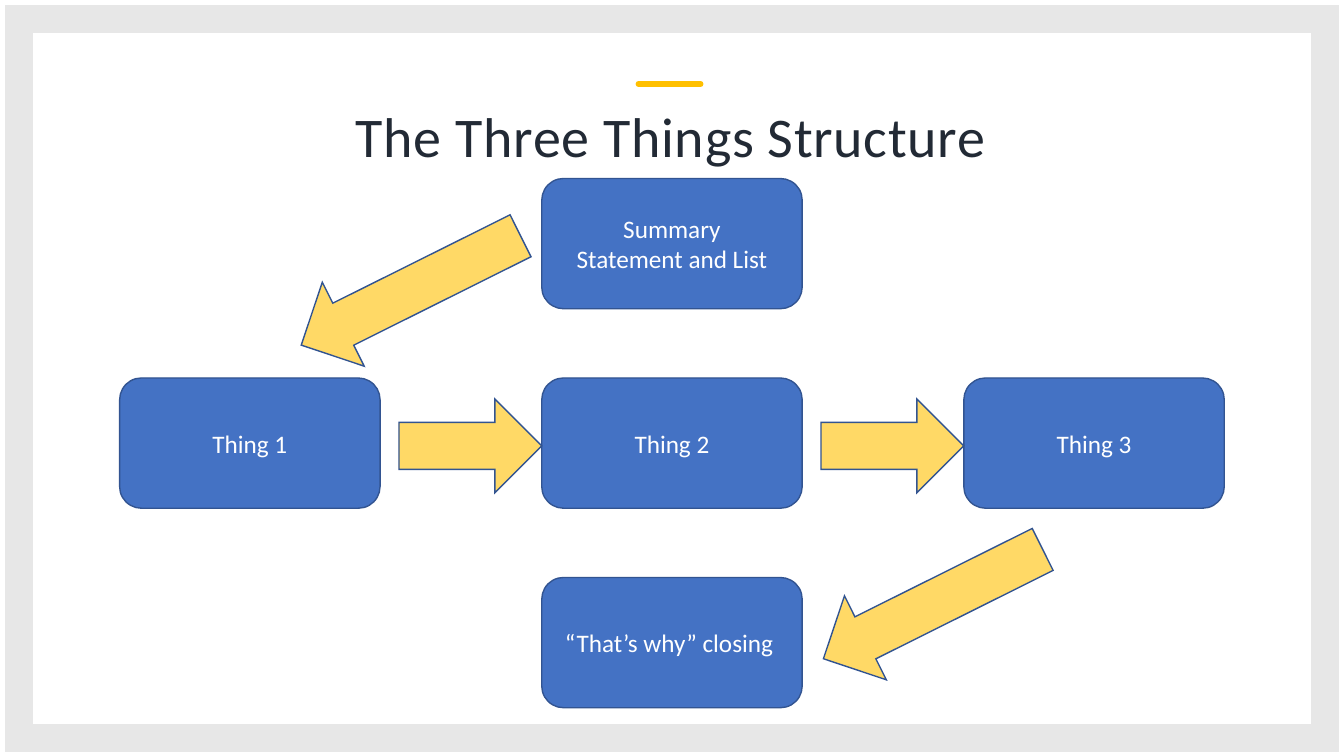
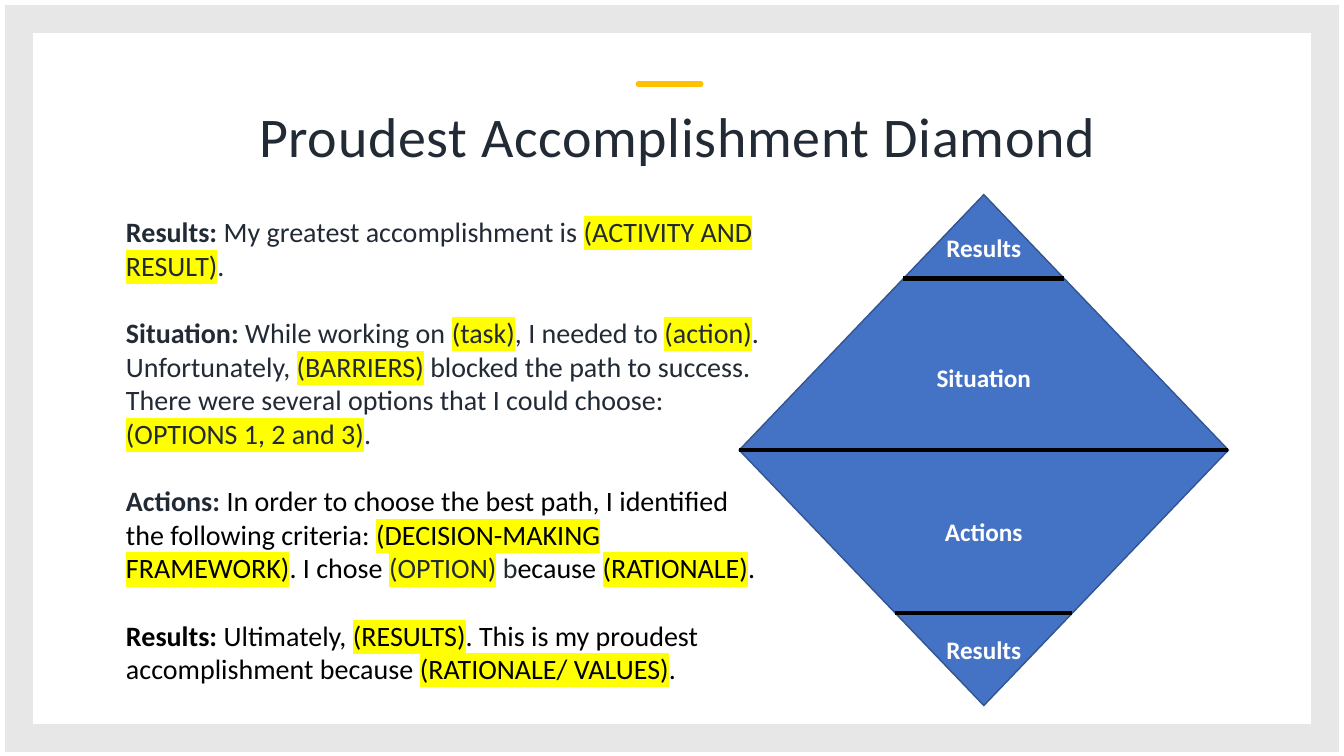
from lxml import etree
from pptx import Presentation
from pptx.dml.color import RGBColor
from pptx.enum.shapes import MSO_CONNECTOR, MSO_SHAPE
from pptx.enum.text import MSO_ANCHOR, MSO_AUTO_SIZE, PP_ALIGN
from pptx.oxml.ns import qn
from pptx.util import Pt

LINE = MSO_CONNECTOR.STRAIGHT
RECT, ROUND = MSO_SHAPE.RECTANGLE, MSO_SHAPE.ROUNDED_RECTANGLE
ARROW, DIAMOND = MSO_SHAPE.RIGHT_ARROW, MSO_SHAPE.DIAMOND
MIDDLE, TOP = MSO_ANCHOR.MIDDLE, MSO_ANCHOR.TOP
CENTER, LEFT = PP_ALIGN.CENTER, PP_ALIGN.LEFT
FIXED = MSO_AUTO_SIZE.NONE

FONT = "Calibri"
BLUE, EDGE, GOLD, ACCENT = "4472C4", "325491", "FFD966", "FFC000"
DARK, BLACK, WHITE, GREY, MARK = "222A35", "000000", "FFFFFF", "E7E7E7", "FFFF00"

# Bars between "|" signs are highlighted; each span has its own ink.
STORY = [
    ("Results: ", DARK, [
        (DARK, "My greatest accomplishment is |(ACTIVITY AND RESULT)|.")]),
    ("Situation: ", DARK, [
        (DARK, "While working on |(task)|, I needed to |(action)|. Unfortunately, "
               "|(BARRIERS)| blocked the path to success. There were several "
               "options that I could choose: |(OPTIONS 1, 2 and 3)|.")]),
    ("Actions: ", DARK, [
        (BLACK, "In order to choose the best path, I identified the following "
                "criteria: |(DECISION-MAKING FRAMEWORK)|. I chose "),
        (DARK, "|(OPTION)| b"),
        (BLACK, "ecause |(RATIONALE)|.")]),
    ("Results: ", BLACK, [
        (BLACK, "Ultimately, |(RESULTS)|. This is my proudest accomplishment "
                "because |(RATIONALE/ VALUES)|.")]),
]


def paint(target, color):
    """Give a fill a solid colour."""
    target.solid()
    target.fore_color.rgb = RGBColor.from_string(color)


def style(run, size, color, bold=False):
    font = run.font
    font.name, font.size, font.bold = FONT, Pt(size), bold
    paint(font.fill, color)


def mark(run):
    """Highlight a run that is already styled."""
    latin = run.font._element.find(qn("a:latin"))
    light = etree.Element(qn("a:highlight"))
    etree.SubElement(light, qn("a:srgbClr")).set("val", MARK)
    latin.addprevious(light)


def place(item, left, top, width, height):
    item.left, item.top = Pt(left), Pt(top)
    item.width, item.height = Pt(width), Pt(height)


def write(shape, text, size, color, bold=False):
    """Put centred text in a shape."""
    frame = shape.text_frame
    frame.word_wrap = True
    frame.vertical_anchor = MIDDLE
    frame.text = text
    for para in frame.paragraphs:
        para.alignment = CENTER
        for run in para.runs:
            style(run, size, color, bold)


def block(shapes, kind, left, top, width, height, fill, edge=EDGE, weight=1):
    shape = shapes.add_shape(kind, Pt(left), Pt(top), Pt(width), Pt(height))
    shape.shadow.inherit = False
    if fill:
        paint(shape.fill, fill)
    else:
        shape.fill.background()
    paint(shape.line.fill, edge)
    shape.line.width = Pt(weight)
    etree.SubElement(shape.element.spPr.find(qn("a:ln")), qn("a:miter")).set("lim", "800000")
    return shape


def rule(shapes, left, right, top, color, weight):
    """Draw a level line."""
    line = shapes.add_connector(LINE, Pt(left), Pt(top), Pt(right), Pt(top))
    paint(line.line.fill, color)
    line.line.width = Pt(weight)
    etree.SubElement(line.element.spPr, qn("a:effectLst"))
    return line


def dress(deck, slide):
    """Move the grey frame and the accent bar to the master."""
    frame = block(slide.shapes, RECT, 13.5, 13.5, 933, 514, None, GREY, 20)
    bar = rule(slide.shapes, 456, 500.5, 60, ACCENT, 4)
    bar.element.spPr.find(qn("a:ln")).set("cap", "rnd")
    for num, part in enumerate((frame, bar), 101):
        part.element.xpath(".//p:cNvPr")[0].set("id", str(num))
        deck.slide_master.shapes.element.append(part.element)


def head(slide, text):
    title = slide.shapes.title
    place(title, 67.5, 70.5, 826, 57)
    write(title, text, 40, DARK)
    frame = title.text_frame
    frame.auto_size = FIXED
    frame.margin_left, frame.margin_right = Pt(14.4), Pt(7.2)
    frame.margin_top, frame.margin_bottom = Pt(7.2), Pt(5.8)
    para = frame.paragraphs[0]
    para.line_spacing = 0.9
    para.runs[0].font._element.set("spc", "50")


def flow(slide, left, top):
    """Draw the five steps on a three by three grid, with their arrows."""
    wide, high, across, down = 186, 93, 301.5, 142.5
    steps = [(1, 0, "Summary\nStatement and List"), (0, 1, "Thing 1"),
             (1, 1, "Thing 2"), (2, 1, "Thing 3"), (1, 2, "“That’s why” closing ")]
    for col, row, text in steps:
        box = block(slide.shapes, ROUND, left + col * across,
                    top + row * down, wide, high, BLUE)
        write(box, text, 18, WHITE)
    arrows = [(120.5, 46.5, 175, 153.5), (199.5, 157.5, 102, 0),
              (501, 157.5, 102, 0), (493.5, 270.5, 175, 153.5)]
    for x, y, size, turn in arrows:
        arrow = block(slide.shapes, ARROW, left + x, top + y, size, 67, GOLD)
        arrow.rotation = turn


def gem(slide, left, top, width, height):
    """Draw the diamond, cut by lines as wide as it is at that height."""
    shapes = slide.shapes.add_group_shape().shapes
    block(shapes, DIAMOND, left, top, width, height, BLUE)
    mid = left + width / 2
    for drop in (height / 2, 60, 299):
        half = width * min(drop, height - drop) / height
        rule(shapes, mid - half, mid + half, top + drop, BLACK, 3)
    labels = [("Results", 23), ("Situation", 116), ("Actions", 226), ("Results", 310)]
    for text, drop in labels:
        box = shapes.add_textbox(Pt(mid - 51), Pt(top + drop), Pt(102), Pt(29))
        write(box, text, 18, WHITE, True)


def story(slide, left, top, width, height):
    body = slide.placeholders[1]
    place(body, left, top, width, height)
    frame = body.text_frame
    frame.auto_size = FIXED
    frame.word_wrap = True
    frame.vertical_anchor = TOP
    for num, (label, ink, spans) in enumerate(STORY):
        para = frame.add_paragraph() if num else frame.paragraphs[0]
        para.alignment = LEFT
        para.space_before = Pt(24)
        props = para._p.get_or_add_pPr()
        props.set("marL", "0")
        props.set("indent", "0")
        etree.SubElement(props, qn("a:buNone"))
        run = para.add_run()
        run.text = label
        style(run, 20, ink, True)
        for color, text in spans:
            for turn, piece in enumerate(text.split("|")):
                if not piece:
                    continue
                run = para.add_run()
                run.text = piece
                style(run, 20, color)
                if turn % 2:
                    mark(run)


def main():
    deck = Presentation()
    deck.slide_width, deck.slide_height = Pt(960), Pt(540)

    first = deck.slides.add_slide(deck.slide_layouts[5])
    dress(deck, first)
    head(first, "The Three Things Structure ")
    flow(first, 85.5, 127.5)

    second = deck.slides.add_slide(deck.slide_layouts[1])
    head(second, "Proudest Accomplishment Diamond")
    gem(second, 528, 139, 349.5, 365)
    story(second, 82.8, 149.8, 468, 346)

    deck.save("out.pptx")


if __name__ == "__main__":
    main()
